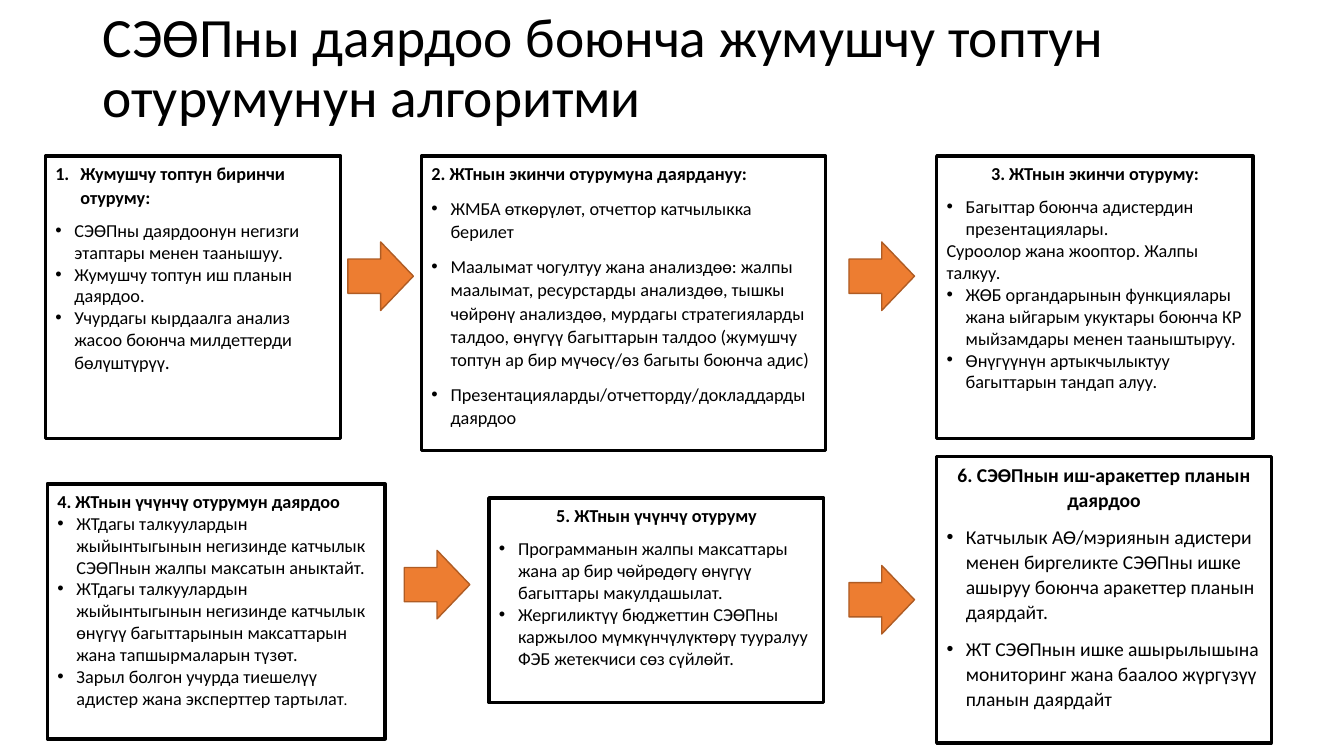
from dataclasses import dataclass
from typing import Optional

import lxml.etree
import pptx
import pptx.dml.color
import pptx.enum.shapes
import pptx.enum.text
import pptx.oxml.ns
import pptx.util

EMU_PER_PX = 9144  # 100 px to the inch
RGB = pptx.dml.color.RGBColor
ALIGN = pptx.enum.text.PP_ALIGN
SHAPE = pptx.enum.shapes.MSO_SHAPE


@dataclass(frozen=True)
class Theme:
    font: str = "Calibri"
    ink: RGB = RGB(0x00, 0x00, 0x00)
    paper: RGB = RGB(0xFF, 0xFF, 0xFF)
    arrow: RGB = RGB(0xED, 0x7D, 0x31)
    arrow_edge: RGB = RGB(0xAF, 0x5C, 0x24)
    title_size: float = 39.6
    body_size: float = 13
    large_size: float = 14
    small_size: float = 11
    box_line: float = 2.5
    arrow_line: float = 1
    title_spacing: float = 0.9
    loose_spacing: float = 1.07
    gap_after: float = 8


THEME = Theme()


@dataclass(frozen=True)
class Frame:
    left: int
    top: int
    width: int
    height: int

    def emu(self) -> tuple[int, ...]:
        return tuple(n * EMU_PER_PX for n in (self.left, self.top, self.width, self.height))


@dataclass(frozen=True)
class Line:
    text: str
    marker: str = "•"
    bold: bool = False
    loose: bool = False
    gap: bool = False
    centered: bool = False
    full_stop_size: Optional[float] = None


@dataclass(frozen=True)
class Step:
    frame: Frame
    lines: tuple[Line, ...]
    size: float = THEME.body_size


def heading(text: str, marker: str = "", centered: bool = False, gap: bool = True) -> Line:
    return Line(text, marker, bold=True, loose=True, gap=gap, centered=centered)


def spaced(text: str) -> Line:
    """A bullet with loose line spacing and a gap below it."""
    return Line(text, loose=True, gap=True)


TITLE_FRAME = Frame(92, 0, 1150, 138)
TITLE = "СЭӨПны даярдоо боюнча жумушчу топтун \vотурумунун алгоритми"

STEPS = (
    Step(Frame(45, 155, 293, 280), (
        heading("Жумушчу топтун биринчи отуруму:", marker="1."),
        Line("СЭӨПны даярдоонун негизги этаптары менен таанышуу."),
        Line("Жумушчу топтун иш планын даярдоо."),
        Line("Учурдагы кырдаалга анализ жасоо боюнча милдеттерди бөлүштүрүү",
             full_stop_size=THEME.large_size),
    )),
    Step(Frame(418, 155, 401, 292), (
        heading("2. ЖТнын экинчи отурумуна даярдануу:"),
        spaced("ЖМБА өткөрүлөт, отчеттор катчылыкка берилет"),
        spaced("Маалымат чогултуу жана анализдөө: жалпы маалымат, ресурстарды анализдөө, "
               "тышкы чөйрөнү анализдөө, мурдагы стратегияларды талдоо, өнүгүү багыттарын "
               "талдоо (жумушчу топтун ар бир мүчөсү/өз багыты боюнча адис)"),
        spaced("Презентацияларды/отчетторду/докладдарды даярдоо"),
    )),
    Step(Frame(929, 155, 314, 280), (
        heading("3. ЖТнын экинчи отуруму:", centered=True),
        Line("Багыттар боюнча адистердин презентациялары."),
        Line("Суроолор жана жооптор. Жалпы талкуу.", marker=""),
        Line("ЖӨБ органдарынын функциялары жана ыйгарым укуктары боюнча КР "
             "мыйзамдары менен тааныштыруу."),
        Line("Өнүгүүнүн артыкчылыктуу багыттарын тандап алуу."),
    )),
    Step(Frame(47, 480, 335, 253), (
        heading("4. ЖТнын үчүнчү отурумун даярдоо", gap=False),
        Line("ЖТдагы талкуулардын жыйынтыгынын негизинде катчылык СЭӨПнын жалпы "
             "максатын аныктайт."),
        Line("ЖТдагы талкуулардын жыйынтыгынын негизинде катчылык өнүгүү багыттарынын "
             "максаттарын жана тапшырмаларын түзөт."),
        Line("Зарыл болгон учурда тиешелүү адистер жана эксперттер тартылат",
             full_stop_size=THEME.small_size),
    )),
    Step(Frame(485, 494, 332, 203), (
        heading("5. ЖТнын үчүнчү отуруму", centered=True),
        Line("Программанын жалпы максаттары жана ар бир чөйрөдөгү өнүгүү багыттары "
             "макулдашылат."),
        Line("Жергиликтүү бюджеттин СЭӨПны каржылоо мүмкүнчүлүктөрү тууралуу ФЭБ "
             "жетекчиси сөз сүйлөйт."),
    )),
    Step(Frame(929, 453, 332, 284), (
        heading("6. СЭӨПнын иш-аракеттер планын даярдоо", centered=True),
        spaced("Катчылык АӨ/мэриянын адистери менен биргеликте СЭӨПны ишке ашыруу "
               "боюнча аракеттер планын даярдайт."),
        spaced("ЖТ СЭӨПнын ишке ашырылышына мониторинг жана баалоо жүргүзүү планын даярдайт"),
    ), size=THEME.large_size),
)

ARROWS = tuple(Frame(left, top, 65, 68)
               for left, top in ((345, 240), (842, 240), (401, 546), (842, 561)))


def set_font(font, size: float, bold: bool = False) -> None:
    font.name = THEME.font
    font.size = pptx.util.Pt(size)
    font.bold = bold
    font.color.rgb = THEME.ink


def add_marker(paragraph, marker: str) -> None:
    """Give the paragraph a hanging bullet, or a number if the marker is not a bullet."""
    bulleted = marker == "•"
    indent = (19 if bulleted else 25) * EMU_PER_PX
    properties = paragraph._p.get_or_add_pPr()
    properties.set("marL", str(indent))
    properties.set("indent", str(-indent))
    qn = pptx.oxml.ns.qn
    if bulleted:
        lxml.etree.SubElement(properties, qn("a:buFont")).set("typeface", "Arial")
        lxml.etree.SubElement(properties, qn("a:buChar")).set("char", marker)
    else:
        lxml.etree.SubElement(properties, qn("a:buAutoNum")).set("type", "arabicPeriod")


def write_line(paragraph, line: Line, size: float) -> None:
    paragraph.alignment = ALIGN.CENTER if line.centered else ALIGN.LEFT
    paragraph.line_spacing = THEME.loose_spacing if line.loose else 1.0
    paragraph.space_after = pptx.util.Pt(THEME.gap_after if line.gap else 0)
    if line.marker:
        add_marker(paragraph, line.marker)
    set_font(paragraph.font, size, line.bold)
    paragraph.add_run().text = line.text
    if line.full_stop_size:
        full_stop = paragraph.add_run()
        full_stop.text = "."
        full_stop.font.size = pptx.util.Pt(line.full_stop_size)


def add_block(slide, kind: SHAPE, frame: Frame, fill: RGB, edge: RGB, edge_width: float):
    block = slide.shapes.add_shape(kind, *frame.emu())
    block.shadow.inherit = False
    block.fill.solid()
    block.fill.fore_color.rgb = fill
    block.line.color.rgb = edge
    block.line.width = pptx.util.Pt(edge_width)
    return block


def add_step(slide, step: Step) -> None:
    box = add_block(slide, SHAPE.RECTANGLE, step.frame, THEME.paper, THEME.ink, THEME.box_line)
    content = box.text_frame
    content.word_wrap = True
    content.vertical_anchor = pptx.enum.text.MSO_ANCHOR.TOP
    for index, line in enumerate(step.lines):
        paragraph = content.add_paragraph() if index else content.paragraphs[0]
        write_line(paragraph, line, step.size)


def add_title(slide) -> None:
    content = slide.shapes.add_textbox(*TITLE_FRAME.emu()).text_frame
    content.word_wrap = True
    content.vertical_anchor = pptx.enum.text.MSO_ANCHOR.MIDDLE
    paragraph = content.paragraphs[0]
    paragraph.line_spacing = THEME.title_spacing
    set_font(paragraph.font, THEME.title_size)
    paragraph.text = TITLE


def main() -> None:
    deck = pptx.Presentation()
    deck.slide_width = 1333 * EMU_PER_PX
    deck.slide_height = 750 * EMU_PER_PX
    slide = deck.slides.add_slide(deck.slide_layouts[6])
    add_title(slide)
    for step in STEPS:
        add_step(slide, step)
    for frame in ARROWS:
        add_block(slide, SHAPE.RIGHT_ARROW, frame, THEME.arrow, THEME.arrow_edge, THEME.arrow_line)
    deck.save("out.pptx")


if __name__ == "__main__":
    main()
